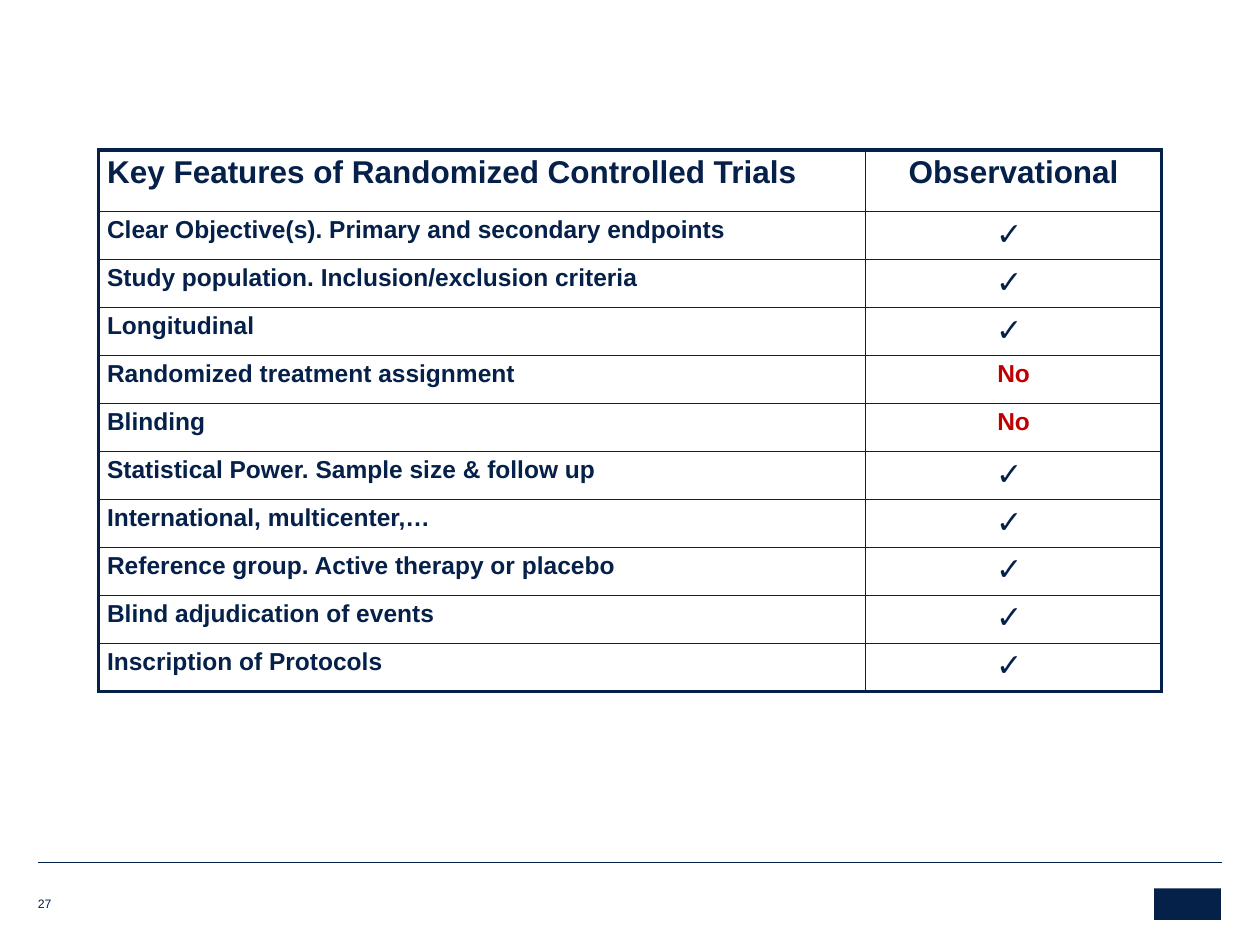
from dataclasses import dataclass

from lxml import etree
from pptx import Presentation
from pptx.dml.color import RGBColor
from pptx.enum.shapes import MSO_CONNECTOR, MSO_SHAPE
from pptx.enum.text import MSO_ANCHOR, PP_ALIGN
from pptx.oxml.ns import qn
from pptx.util import Inches, Pt

LEFT, CENTER = PP_ALIGN.LEFT, PP_ALIGN.CENTER
BOTTOM = MSO_ANCHOR.BOTTOM
STRAIGHT = MSO_CONNECTOR.STRAIGHT
RECTANGLE = MSO_SHAPE.RECTANGLE


@dataclass(frozen=True)
class Theme:
    font: str = "Arial"
    navy: str = "052049"
    red: str = "C00000"
    header: float = 18
    body: float = 14
    check: float = 18
    number: float = 7
    outer: float = 2.25
    inner: float = 1
    rule: float = 0.25


THEME = Theme()
CHECK, NO = "✓", "No"
HEADER = ("Key Features of Randomized Controlled Trials", "Observational")
FEATURES = [
    ("Clear Objective(s). Primary and secondary endpoints", CHECK),
    ("Study population. Inclusion/exclusion criteria", CHECK),
    ("Longitudinal", CHECK),
    ("Randomized treatment assignment", NO),
    ("Blinding", NO),
    ("Statistical Power. Sample size & follow up", CHECK),
    ("International, multicenter,…", CHECK),
    ("Reference group. Active therapy or placebo", CHECK),
    ("Blind adjudication of events", CHECK),
    ("Inscription of Protocols", CHECK),
]
COL_WIDTHS = (6.09, 2.35)
TABLE_HEIGHT, HEADER_HEIGHT = 4.3, 0.49
ROW_HEIGHT = (TABLE_HEIGHT - HEADER_HEIGHT) / len(FEATURES)


def write(tf, text, size, color=THEME.navy, bold=False, align=LEFT):
    p = tf.paragraphs[0]
    p.text = text
    p.alignment = align
    font = p.runs[0].font
    font.name, font.size, font.bold = THEME.font, Pt(size), bold
    font.color.rgb = RGBColor.from_string(color)


def write_check(tf):
    # The mark is a bullet; a bullet only draws beside a run
    write(tf, " ", THEME.check, align=CENTER)
    p_pr = tf.paragraphs[0]._p.get_or_add_pPr()
    p_pr.set("marL", "0")
    p_pr.set("indent", "0")
    etree.SubElement(p_pr, qn("a:buFont"), typeface=THEME.font)
    etree.SubElement(p_pr, qn("a:buChar"), char=CHECK)


def set_border(cell, side, width):
    tc_pr = cell._tc.get_or_add_tcPr()
    ln = etree.SubElement(tc_pr, qn(f"a:ln{side}"), w=str(Pt(width)))
    fill = etree.SubElement(ln, qn("a:solidFill"))
    etree.SubElement(fill, qn("a:srgbClr"), val=THEME.navy)


def style_cell(cell, row, col, last_row, last_col):
    # Heavy lines on the table's outer edge, thin lines inside
    outer_edges = {"L": col == 0, "R": col == last_col,
                   "T": row == 0, "B": row == last_row}
    for side, is_outer in outer_edges.items():
        set_border(cell, side, THEME.outer if is_outer else THEME.inner)
    cell.fill.background()
    cell.margin_left = cell.margin_right = Inches(0.07)
    cell.margin_top = cell.margin_bottom = Inches(0.04)


def add_feature_table(s, left, top):
    rows = [HEADER, *FEATURES]
    table = s.shapes.add_table(
        len(rows), len(COL_WIDTHS), Inches(left), Inches(top),
        Inches(sum(COL_WIDTHS)), Inches(TABLE_HEIGHT)).table
    table.first_row = table.horz_banding = False
    for column, width in zip(table.columns, COL_WIDTHS):
        column.width = Inches(width)
    for i, texts in enumerate(rows):
        table.rows[i].height = Inches(ROW_HEIGHT if i else HEADER_HEIGHT)
        for j, text in enumerate(texts):
            cell = table.cell(i, j)
            style_cell(cell, i, j, len(rows) - 1, len(COL_WIDTHS) - 1)
            if text == CHECK:
                write_check(cell.text_frame)
            else:
                write(cell.text_frame, text,
                      THEME.body if i else THEME.header,
                      THEME.red if text == NO else THEME.navy,
                      bold=True, align=CENTER if j else LEFT)


def add_rule(s, x1, x2, y):
    line = s.shapes.add_connector(
        STRAIGHT, Inches(x1), Inches(y), Inches(x2), Inches(y))
    line.line.color.rgb = RGBColor.from_string(THEME.navy)
    line.line.width = Pt(THEME.rule)
    etree.SubElement(line._element.spPr, qn("a:effectLst"))


def add_block(s, left, top, width, height):
    sp = s.shapes.add_shape(
        RECTANGLE, Inches(left), Inches(top), Inches(width), Inches(height))
    sp.shadow.inherit = False
    sp.fill.solid()
    sp.fill.fore_color.rgb = RGBColor.from_string(THEME.navy)
    sp.line.fill.background()


def add_slide_number(s, text, left, top, width, height):
    tf = s.shapes.add_textbox(
        Inches(left), Inches(top), Inches(width), Inches(height)).text_frame
    tf.word_wrap = True
    tf.vertical_anchor = BOTTOM
    tf.margin_left = tf.margin_right = tf.margin_top = tf.margin_bottom = 0
    write(tf, text, THEME.number)


def main():
    prs = Presentation()
    prs.slide_width, prs.slide_height = Inches(10), Inches(7.5)
    s = prs.slides.add_slide(prs.slide_layouts[6])

    # Footer rule and emblem block
    add_rule(s, 0.3, 9.7, 6.84)
    add_block(s, 9.16, 7.05, 0.53, 0.25)

    # Comparison of trial features
    add_feature_table(s, 0.78, 1.19)

    # Slide number
    add_slide_number(s, "27", 0.3, 7.06, 0.27, 0.17)

    prs.save("out.pptx")


if __name__ == "__main__":
    main()
